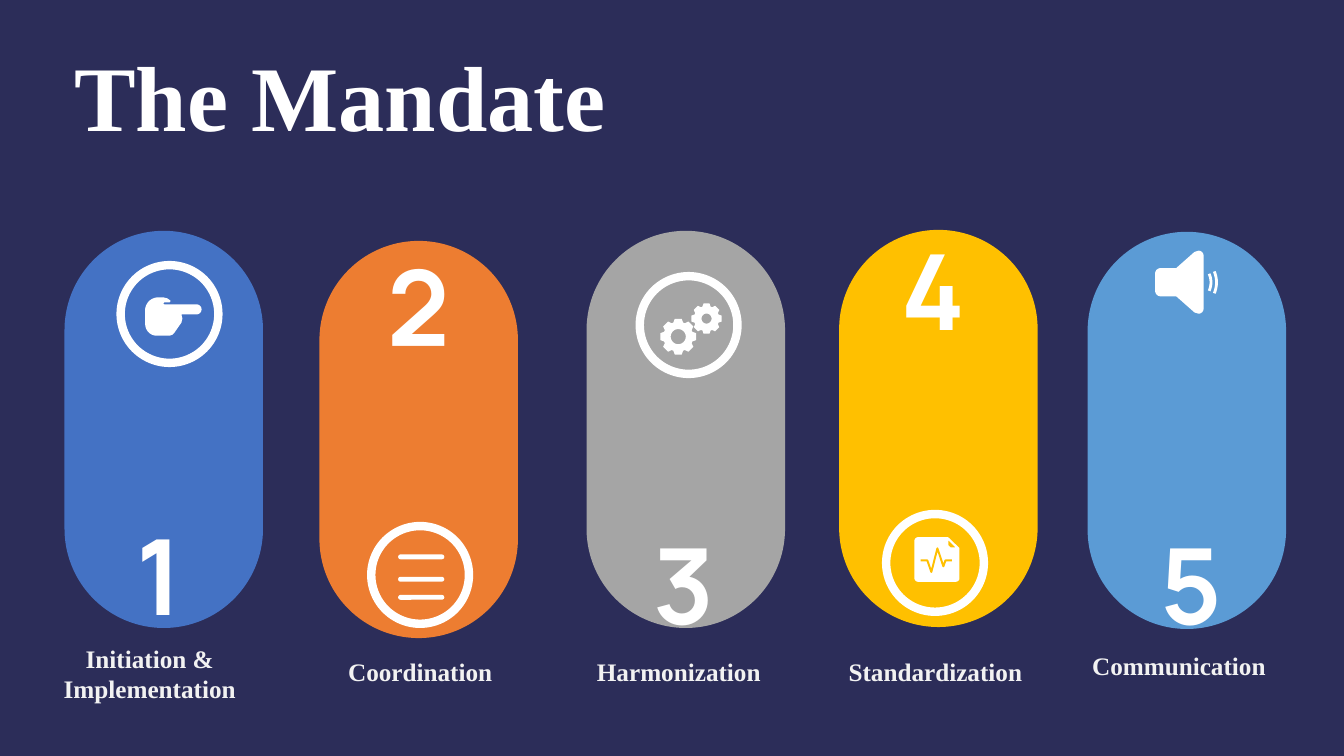
from math import cos, radians, sin

from pptx import Presentation
from pptx.dml.color import RGBColor
from pptx.enum.shapes import MSO_SHAPE as Shape
from pptx.enum.text import PP_ALIGN as Align
from pptx.util import Pt

NAVY = RGBColor(0x2C, 0x2D, 0x59)
WHITE = RGBColor(0xFF, 0xFF, 0xFF)
PALE = RGBColor(0xF2, 0xF2, 0xF2)
BLUE = RGBColor(0x44, 0x72, 0xC4)
ORANGE = RGBColor(0xED, 0x7D, 0x31)
GRAY = RGBColor(0xA5, 0xA5, 0xA5)
GOLD = RGBColor(0xFF, 0xC0, 0x00)
SKY = RGBColor(0x5B, 0x9B, 0xD5)
SERIF = "Times New Roman"
DIGIT = "Manrope"


def arc(x, y, r, start, end, steps=10):
    """Points on a circle; angles in degrees, clockwise from the right."""
    turns = [radians(start + (end - start) * i / steps) for i in range(steps + 1)]
    return [(x + r * cos(t), y + r * sin(t)) for t in turns]


class Deck:
    def __init__(self):
        self.prs = Presentation()
        self.prs.slide_width, self.prs.slide_height = Pt(960), Pt(540)
        self.slide = self.prs.slides.add_slide(self.prs.slide_layouts[6])
        self.shapes = self.slide.shapes
        back = self.slide.background.fill
        back.solid()
        back.fore_color.rgb = NAVY

    def paint(self, shape, fill=None, line=None, width=0):
        shape.shadow.inherit = False
        if fill is None:
            shape.fill.background()
        else:
            shape.fill.solid()
            shape.fill.fore_color.rgb = fill
        if line is None:
            shape.line.fill.background()
        else:
            shape.line.color.rgb = line
            shape.line.width = Pt(width)

    def pill(self, x, y, w, h, fill):
        shape = self.shapes.add_shape(Shape.ROUNDED_RECTANGLE, Pt(x), Pt(y), Pt(w), Pt(h))
        shape.adjustments[0] = 0.5
        self.paint(shape, fill)

    def ring(self, x, y):
        shape = self.shapes.add_shape(Shape.OVAL, Pt(x), Pt(y), Pt(69.8), Pt(69.8))
        self.paint(shape, line=WHITE, width=6)

    def text(self, words, x, y, w, h, size, font, color, align=Align.CENTER, wrap=True):
        frame = self.shapes.add_textbox(Pt(x), Pt(y), Pt(w), Pt(h)).text_frame
        frame.word_wrap = wrap
        para = frame.paragraphs[0]
        para.text, para.alignment = words, align
        para.font.name, para.font.size, para.font.bold = font, Pt(size), True
        para.font.color.rgb = color

    def trace(self, loops, closed):
        pen = None
        for loop in loops:
            first, *rest = [(Pt(x), Pt(y)) for x, y in loop]
            if pen is None:
                pen = self.shapes.build_freeform(*first)
            else:
                pen.move_to(*first)
            pen.add_line_segments(rest, close=closed)
        return pen.convert_to_shape()

    def solid(self, *loops):
        """White outline; loops after the first are holes."""
        self.paint(self.trace(loops, True), WHITE)

    def stroke(self, points, color, width):
        self.paint(self.trace([points], False), line=color, width=width)

    def gear(self, x, y, r, hole):
        rim = []
        for tooth in range(0, 360, 45):
            for turn, size in ((-19, 0.82), (-11, 1), (11, 1), (19, 0.82)):
                rim += arc(x, y, r * size, tooth + turn, tooth + turn, 1)[:1]
        self.solid(rim, arc(x, y, hole, 0, 360, 30))


def hand(deck):
    deck.solid(
        arc(113, 221.8, 9.4, 270, 180) + arc(112, 231.5, 8.3, 180, 90)
        + [(121, 239.8), (123, 239.2), (124.6, 237.6), (129.6, 230.4),
           (130.3, 227.5), (129.6, 224.6)]
        + arc(140.4, 221, 3.6, 90, -90)
        + [(117.4, 217.4), (116.6, 216.7), (117.4, 216), (121, 216),
           (121.7, 215.3), (121.7, 214.6), (119.3, 213), (116.6, 212.4)])


def page(deck):
    deck.solid(
        arc(655.9, 386.4, 2.7, 180, 270) + [(677.3, 383.7), (685.4, 391.5)]
        + arc(682.7, 412.9, 2.7, 0, 90) + arc(655.9, 412.9, 2.7, 90, 180),
        [(677.5, 385.9), (682.6, 391), (679, 391), (677.5, 389.5)])
    deck.stroke([(657.6, 400.3), (662.4, 400.3), (665.3, 408.6), (669.6, 391.7),
                 (673.9, 404.6), (675.4, 400.3), (680, 400.3)], GOLD, 1.4)


def speaker(deck):
    deck.solid(
        arc(829.1, 195.5, 4, 270, 180) + arc(829.1, 207.7, 4, 180, 90)
        + [(840.2, 211.7), (853.2, 223.2)] + arc(856.1, 220.5, 3.6, 90, 0)
        + arc(856.1, 182.7, 3.6, 0, -90) + [(853.2, 180), (840.2, 191.5)])
    for x, r, half in ((849, 20, 23), (850, 15, 24)):
        deck.stroke(arc(x, 201.7, r, -half, half), WHITE, 2)


# Each step: color, pill (x, y), label, label (x, y, w, h), digit (x, y, w)
STEPS = [
    (BLUE, (46.1, 164.9), "Initiation & Implementation", (22.3, 455.8, 169.2, 51),
     (90.7, 361.4, 43.2)),
    (ORANGE, (228.2, 172.1), "Coordination", (228.2, 465.1, 144, 29), (270, 169.2, 57.6)),
    (GRAY, (419, 164.9), "Harmonization", (411.8, 465.1, 146.2, 29), (458.6, 367.2, 60.5)),
    (GOLD, (599.4, 164.2), "Standardization", (597.6, 465.1, 141.1, 29),
     (634.3, 157.7, 65.5)),
    (SKY, (776.9, 165.6), "Communication", (765.4, 460.8, 153.4, 29), (818.6, 367.2, 64.1)),
]
RINGS = [(86.2, 189.4), (265.2, 375.8), (457, 197.3), (633, 367.2)]


def main():
    deck = Deck()
    for num, (color, spot, label, box, (x, y, w)) in enumerate(STEPS, 1):
        deck.pill(*spot, 141.8, 283.7, color)
        deck.text(label, *box, 18, SERIF, PALE)
        deck.text(str(num), x, y, w, 97.9, 75, DIGIT, WHITE, wrap=False)
    for spot in RINGS:
        deck.ring(*spot)
    hand(deck)
    for y in (396, 412, 424.9):
        deck.pill(284.4, y, 33, 3.5, WHITE)
    deck.gear(484.5, 240.5, 13, 5.4)
    deck.gear(504.7, 227.6, 11, 3.6)
    page(deck)
    speaker(deck)
    deck.text("The Mandate", 46.1, 24.5, 872.6, 87.1, 66, SERIF, WHITE, Align.LEFT)
    deck.prs.save("out.pptx")


if __name__ == "__main__":
    main()
